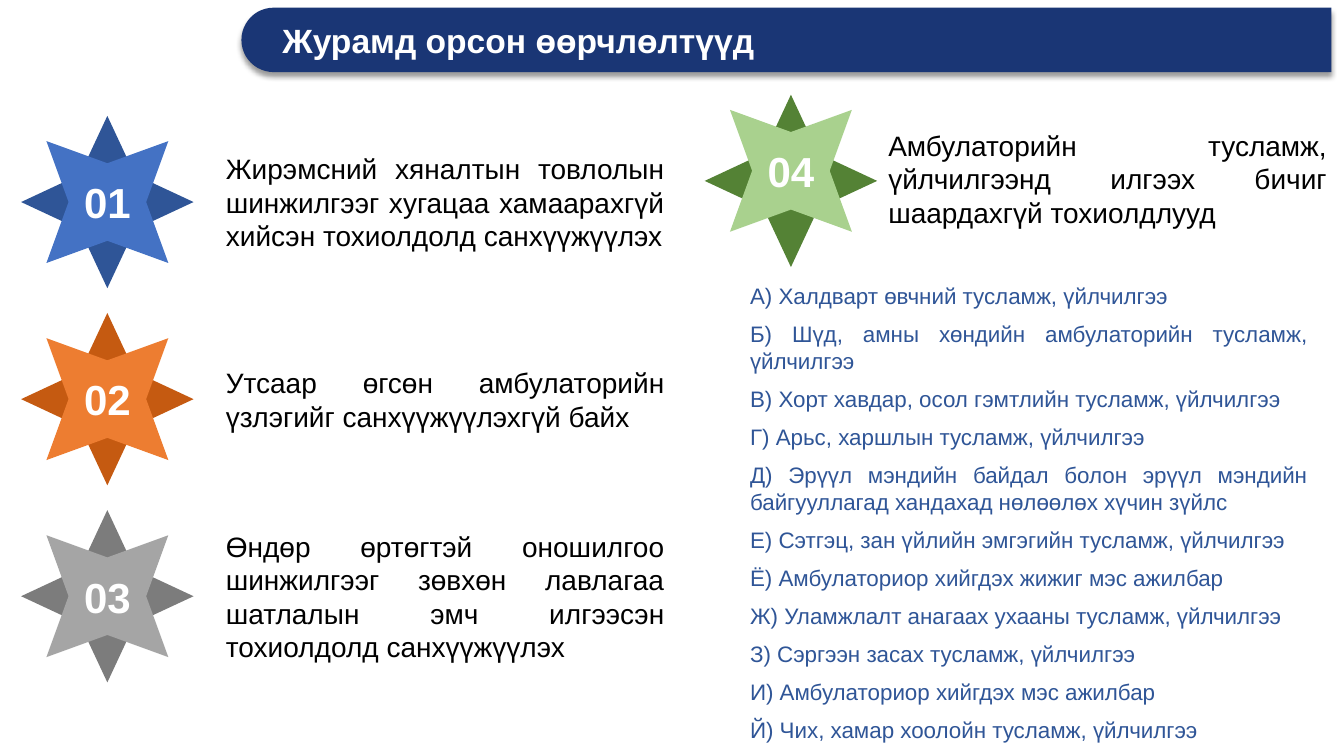
from dataclasses import dataclass

from lxml.etree import SubElement
from pptx import Presentation
from pptx.dml.color import RGBColor
from pptx.enum.shapes import MSO_SHAPE
from pptx.enum.text import MSO_ANCHOR, MSO_AUTO_SIZE, PP_ALIGN
from pptx.oxml import parse_xml
from pptx.oxml.ns import nsdecls, qn
from pptx.util import Inches, Pt


@dataclass(frozen=True)
class Theme:
    font: str = "Arial"
    banner: str = "1A3675"
    light: str = "FFFFFF"
    text: str = "000000"
    accent: str = "2F5597"
    title_size: int = 24
    number_size: int = 30
    text_size: int = 20
    list_size: int = 16


@dataclass(frozen=True)
class Change:
    """One numbered change; positions are percentages of the slide."""
    number: str
    text: str
    lines: int
    back: str
    front: str
    x: float
    y: float
    front_y: float
    text_x: float
    text_y: float
    plate: bool = False


THEME = Theme()
WIDTH, HEIGHT = Inches(13.33), Inches(7.5)
STAR_WIDTH, STAR_HEIGHT = 12.83, 22.8
FIRST_ROW, ROW_PITCH = 26.73, 26.07
LINE_HEIGHT = 4.53

TITLE = "Журамд орсон өөрчлөлтүүд"
LEFT_COLUMN = [
    ("Жирэмсний хяналтын товлолын шинжилгээг хугацаа хамаарахгүй "
     "хийсэн тохиолдолд санхүүжүүлэх", 3, "2F5597", "4472C4"),
    ("Утсаар өгсөн амбулаторийн үзлэгийг санхүүжүүлэхгүй байх",
     2, "C55A11", "ED7D31"),
    ("Өндөр өртөгтэй оношилгоо шинжилгээг зөвхөн лавлагаа шатлалын эмч "
     "илгээсэн тохиолдолд санхүүжүүлэх", 4, "7C7C7C", "A5A5A5"),
]
REFERRAL_CHANGE = Change(
    "04", "Амбулаторийн тусламж, үйлчилгээнд илгээх бичиг шаардахгүй тохиолдлууд",
    3, "548235", "A9D18E", x=58.85, y=23.93, front_y=22.6,
    text_x=65.72, text_y=23.6, plate=True)
REFERRAL_CASES = [
    "А) Халдварт өвчний тусламж, үйлчилгээ",
    "Б) Шүд, амны хөндийн амбулаторийн тусламж, үйлчилгээ",
    "В) Хорт хавдар, осол гэмтлийн тусламж, үйлчилгээ",
    "Г) Арьс, харшлын тусламж, үйлчилгээ",
    "Д) Эрүүл мэндийн байдал болон эрүүл мэндийн байгууллагад хандахад "
    "нөлөөлөх хүчин зүйлс",
    "Е) Сэтгэц, зан үйлийн эмгэгийн тусламж, үйлчилгээ",
    "Ё) Амбулаториор хийгдэх жижиг мэс ажилбар",
    "Ж) Уламжлалт анагаах ухааны тусламж, үйлчилгээ",
    "З) Сэргээн засах тусламж, үйлчилгээ",
    "И) Амбулаториор хийгдэх мэс ажилбар",
    "Й) Чих, хамар хоолойн тусламж, үйлчилгээ",
]


def area(x, y, width, height):
    """Turn percentages of the slide into left, top, width and height."""
    return (int(WIDTH * x / 100), int(HEIGHT * y / 100),
            int(WIDTH * width / 100), int(HEIGHT * height / 100))


def centred(x, y, width, height):
    return area(x - width / 2, y - height / 2, width, height)


def move(placeholder, bounds):
    placeholder.left, placeholder.top, placeholder.width, placeholder.height = bounds


def fill_solid(shape, color):
    shape.fill.solid()
    shape.fill.fore_color.rgb = RGBColor.from_string(color)


def style(paragraph, size, color, align, bold=False):
    paragraph.alignment = align
    font = paragraph.font
    font.name, font.size, font.bold = THEME.font, Pt(size), bold
    font.color.rgb = RGBColor.from_string(color)


def set_frame(frame, anchor, wrap=True):
    frame.word_wrap = wrap
    frame.auto_size = MSO_AUTO_SIZE.NONE
    frame.vertical_anchor = anchor


def add_plain_shape(slide, kind, bounds, color, rotation=0):
    shape = slide.shapes.add_shape(kind, *bounds)
    shape.shadow.inherit = False
    shape.rotation = rotation
    shape.line.fill.background()
    fill_solid(shape, color)
    return shape


def add_banner(slide):
    """Put the banner with its rounded left end behind the title."""
    banner = add_plain_shape(slide, MSO_SHAPE.ROUND_2_SAME_RECTANGLE,
                             centred(58.51, 5.27, 4.8, 144.13), THEME.banner, 270)
    banner.adjustments[0], banner.adjustments[1] = 0.5, 0
    effects = banner.element.spPr.find(qn("a:effectLst"))
    effects.append(parse_xml(
        f'<a:outerShdw {nsdecls("a")} blurRad="{Pt(4)}" dist="{Pt(3)}" '
        'dir="5400000" rotWithShape="0"><a:srgbClr val="000000">'
        '<a:alpha val="40000"/></a:srgbClr></a:outerShdw>'))
    slide.shapes.title.element.addprevious(banner.element)


def fill_title(slide):
    title = slide.shapes.title
    move(title, area(20.26, 1.33, 77.72, 8.53))
    set_frame(title.text_frame, MSO_ANCHOR.MIDDLE)
    title.text_frame.text = TITLE
    heading = title.text_frame.paragraphs[0]
    heading.line_spacing = 0.9
    style(heading, THEME.title_size, THEME.light, PP_ALIGN.LEFT, bold=True)


def add_text(slide, bounds, text, size, color, align, bold=False, wrap=True):
    box = slide.shapes.add_textbox(*bounds)
    set_frame(box.text_frame, MSO_ANCHOR.MIDDLE, wrap)
    box.text_frame.text = text
    style(box.text_frame.paragraphs[0], size, color, align, bold)
    return box


def add_change(slide, change):
    """Draw a two-layer star with its number and the text beside it."""
    for y, color, rotation in ((change.y, change.back, 0),
                               (change.front_y, change.front, 45)):
        star = add_plain_shape(slide, MSO_SHAPE.STAR_4_POINT,
                               centred(change.x, y, STAR_WIDTH, STAR_HEIGHT),
                               color, rotation)
        star.adjustments[0] = 0.225
    number = add_text(slide, centred(change.x, change.front_y, 5.03, 8.13),
                      change.number, THEME.number_size, THEME.light,
                      PP_ALIGN.CENTER, bold=True, wrap=False)
    if change.plate:
        fill_solid(number, change.front)
    height = LINE_HEIGHT * change.lines + 0.53
    description = add_text(
        slide, area(change.text_x, change.text_y - height / 2, 33.38, height),
        change.text, THEME.text_size, THEME.text, PP_ALIGN.JUSTIFY)
    frame = description.text_frame
    frame.margin_left = frame.margin_right = Inches(0.05)
    frame.margin_top = frame.margin_bottom = Inches(0.03)


def fill_cases(slide):
    cases = slide.placeholders[1]
    move(cases, area(55.06, 36.67, 42.99, 62.93))
    frame = cases.text_frame
    set_frame(frame, MSO_ANCHOR.TOP)
    frame.text = "\n".join(REFERRAL_CASES)
    for case in frame.paragraphs:
        properties = case._p.get_or_add_pPr()
        properties.set("marL", "0")
        properties.set("indent", "0")
        SubElement(properties, qn("a:buNone"))
        case.space_before, case.space_after = Pt(0), Pt(8)
        style(case, THEME.list_size, THEME.accent, PP_ALIGN.JUSTIFY)


def main():
    presentation = Presentation()
    presentation.slide_width, presentation.slide_height = WIDTH, HEIGHT
    slide = presentation.slides.add_slide(presentation.slide_layouts[1])
    add_banner(slide)
    fill_title(slide)
    for row, (text, lines, back, front) in enumerate(LEFT_COLUMN):
        y = FIRST_ROW + row * ROW_PITCH
        add_change(slide, Change(f"{row + 1:02}", text, lines, back, front,
                                 x=7.99, y=y, front_y=y, text_x=16.43, text_y=y))
    add_change(slide, REFERRAL_CHANGE)
    fill_cases(slide)
    presentation.save("out.pptx")


if __name__ == "__main__":
    main()
